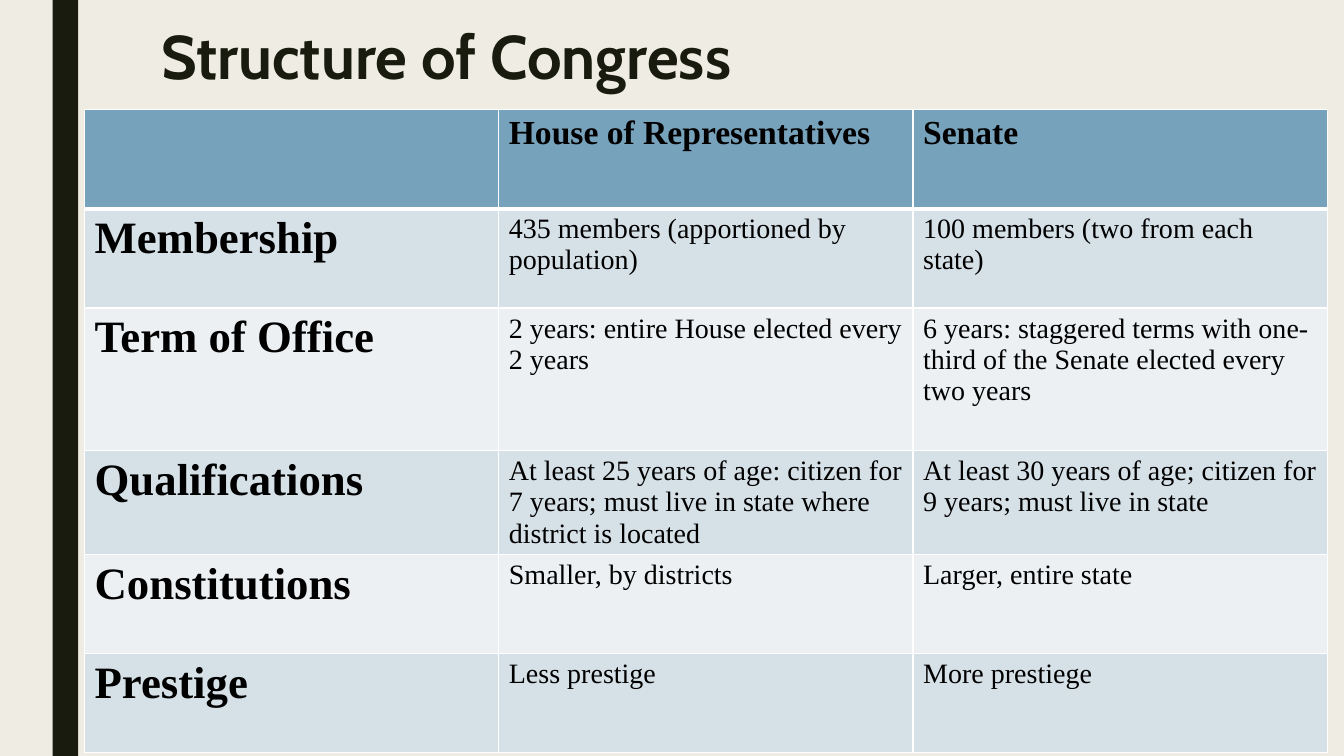
from dataclasses import dataclass

from lxml import etree
from pptx import Presentation
from pptx.dml.color import RGBColor
from pptx.enum import shapes, text
from pptx.oxml import ns
from pptx.util import Cm, Pt


@dataclass(frozen=True)
class Theme:
    background: str = "EFEDE3"
    dark: str = "191B0E"
    header: str = "77A2BB"
    bands: tuple = ("D6E0E7", "ECF0F3")
    body: str = "000000"
    border: str = "FFFFFF"
    title_font: str = "Cabin"
    table_font: str = "Times New Roman"
    title_size: int = 44
    label_size: int = 32
    header_size: int = 24
    body_size: int = 20


THEME = Theme()

ROWS = [
    ("", "House of Representatives", "Senate"),
    ("Membership", "435 members (apportioned by population)",
     "100 members (two from each state)"),
    ("Term of Office", "2 years: entire House elected every 2 years",
     "6 years: staggered terms with one-third of the Senate elected every two years"),
    ("Qualifications",
     "At least 25 years of age: citizen for 7 years; must live in state where district is located",
     "At least 30 years of age; citizen for 9 years; must live in state"),
    ("Constitutions", "Smaller, by districts", "Larger, entire state"),
    ("Prestige", "Less prestige", "More prestiege"),
]
ROW_HEIGHT = Cm(2.5)
TALL_ROWS = {2: Cm(3.6)}
COLUMN_WIDTH = Cm(10.44)


def rgb(value):
    return RGBColor.from_string(value)


def write(tf, content, *, font, size, color, bold=False, spacing=None):
    p = tf.paragraphs[0]
    p.alignment = text.PP_ALIGN.LEFT
    if spacing:
        p.line_spacing = spacing
    r = p.add_run()
    r.text = content
    r.font.name = font
    r.font.size = Pt(size)
    r.font.bold = bold
    r.font.color.rgb = rgb(color)


def add_band(s, height):
    sp = s.shapes.add_shape(shapes.MSO_SHAPE.RECTANGLE, Cm(1.33), 0, Cm(0.64), height)
    sp.shadow.inherit = False
    sp.fill.solid()
    sp.fill.fore_color.rgb = rgb(THEME.dark)
    sp.line.fill.background()


def set_title(s, content):
    sp = s.shapes.title
    sp.left, sp.top, sp.width, sp.height = Cm(3.81), Cm(0.43), Cm(26.67), Cm(4.11)
    tf = sp.text_frame
    tf.margin_left = tf.margin_right = tf.margin_top = tf.margin_bottom = Cm(0.25)
    tf.vertical_anchor = text.MSO_ANCHOR.TOP
    tf.auto_size = text.MSO_AUTO_SIZE.NONE
    write(tf, content, font=THEME.title_font, size=THEME.title_size,
          color=THEME.dark, bold=True, spacing=0.89)


def set_borders(cell, **widths):
    tc_pr = cell._tc.get_or_add_tcPr()
    for i, (side, width) in enumerate(widths.items()):
        ln = etree.Element(ns.qn(f"a:ln{side}"), w=str(Pt(width)))
        fill = etree.SubElement(ln, ns.qn("a:solidFill"))
        etree.SubElement(fill, ns.qn("a:srgbClr"), val=THEME.border)
        tc_pr.insert(i, ln)


def format_cell(cell, content, row, col):
    is_header = row == 0
    cell.fill.solid()
    cell.fill.fore_color.rgb = rgb(THEME.header if is_header else THEME.bands[(row - 1) % 2])
    set_borders(cell, L=1, R=1, T=3 if row == 1 else 1, B=3 if is_header else 1)
    if content:
        size = (THEME.header_size if is_header
                else THEME.label_size if col == 0 else THEME.body_size)
        write(cell.text_frame, content, font=THEME.table_font, size=size,
              color=THEME.body, bold=is_header or col == 0)


def add_comparison(s, rows):
    n_cols = len(rows[0])
    heights = [TALL_ROWS.get(i, ROW_HEIGHT) for i in range(len(rows))]
    table = s.shapes.add_table(len(rows), n_cols, Cm(2.13), Cm(2.76),
                               COLUMN_WIDTH * n_cols, sum(heights)).table
    for column in table.columns:
        column.width = COLUMN_WIDTH
    for i, (height, contents) in enumerate(zip(heights, rows)):
        table.rows[i].height = height
        for j, content in enumerate(contents):
            format_cell(table.cell(i, j), content, i, j)


def main():
    prs = Presentation()
    prs.slide_width, prs.slide_height = Cm(33.87), Cm(19.05)
    s = prs.slides.add_slide(prs.slide_layouts.get_by_name("Title Only"))
    s.background.fill.solid()
    s.background.fill.fore_color.rgb = rgb(THEME.background)
    add_band(s, prs.slide_height)
    set_title(s, "Structure of Congress")
    add_comparison(s, ROWS)
    prs.save("out.pptx")


if __name__ == "__main__":
    main()
